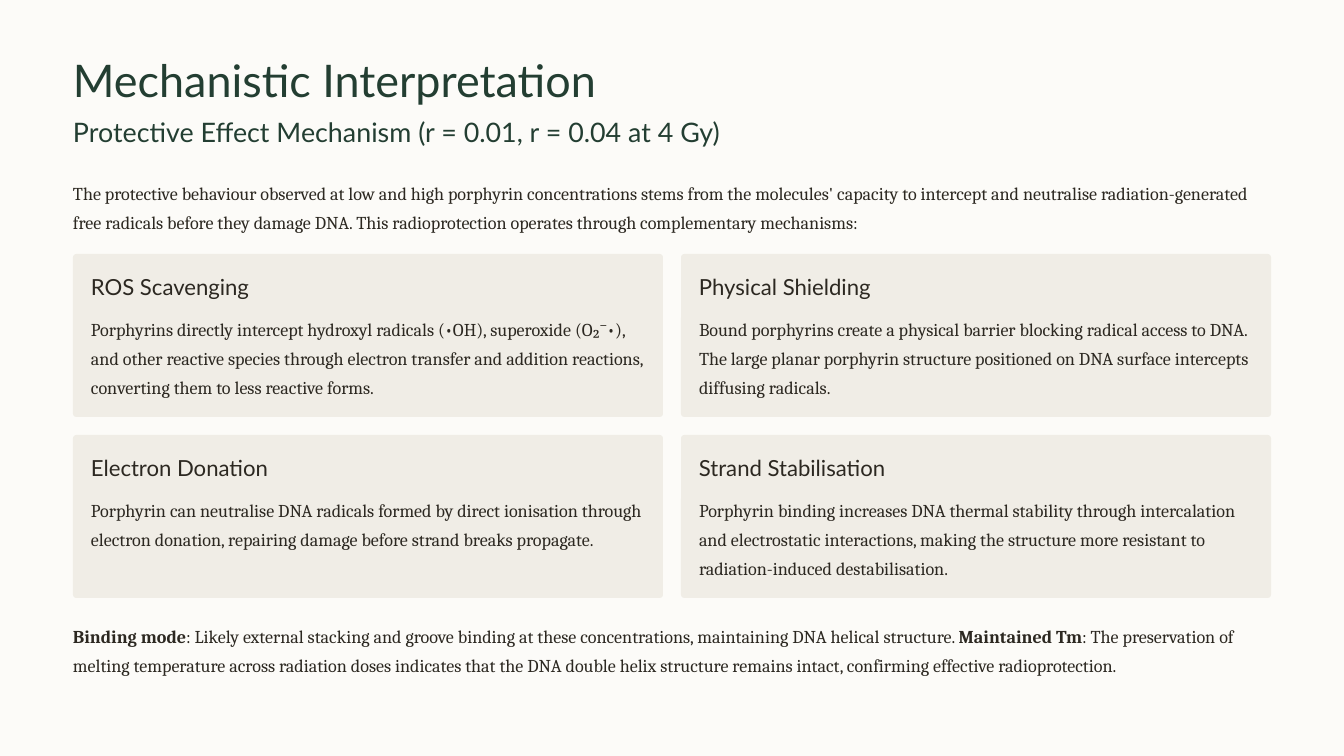
import pptx
import pptx.dml.color
import pptx.enum.shapes
import pptx.util

PX = 914400 // 84
GREEN, INK, SAND, PAPER = "233E32", "2C2821", "F0EDE6", "FCFBF8"

deck = pptx.Presentation()
deck.slide_width = 1344 * PX
deck.slide_height = 756 * PX
slide = deck.slides.add_slide(deck.slide_layouts[6])


def paint(fill, color):
    fill.solid()
    fill.fore_color.rgb = pptx.dml.color.RGBColor.from_string(color)


def write(text, x, y, w, h, size=15.5, font="Cambria", color=INK, lead=24.5, wrap=True):
    """Write a paragraph; parts between ** marks are bold."""
    box = slide.shapes.add_textbox(x * PX, y * PX, w * PX, h * PX)
    frame = box.text_frame
    frame.word_wrap = wrap
    frame.margin_left = frame.margin_top = frame.margin_right = frame.margin_bottom = 0
    para = frame.paragraphs[0]
    para.line_spacing = pptx.util.Pt(lead)
    for i, part in enumerate(text.split("**")):
        if part:
            run = para.add_run()
            run.text = part
            run.font.name = font
            run.font.size = pptx.util.Pt(size)
            run.font.bold = i % 2 == 1
            paint(run.font.fill, color)


# Background
paint(slide.background.fill, PAPER)

# Heading and introduction
left, wide = 73, 1199
write("Mechanistic Interpretation", left, 50, 547, 57,
      size=38.5, font="Lato", color=GREEN, lead=48.5, wrap=False)
write("Protective Effect Mechanism (r = 0.01, r = 0.04 at 4 Gy)", left, 114, 660, 34,
      size=23, font="Lato", color=GREEN, lead=29, wrap=False)
write("The protective behaviour observed at low and high porphyrin concentrations stems "
      "from the molecules' capacity to intercept and neutralise radiation-generated free "
      "radicals before they damage DNA. This radioprotection operates through "
      "complementary mechanisms:", left, 176, wide, 58)

# Mechanism cards in a two by two grid
cards = [
    ("ROS Scavenging",
     "Porphyrins directly intercept hydroxyl radicals (•OH), superoxide (O₂⁻•), and other "
     "reactive species through electron transfer and addition reactions, converting them "
     "to less reactive forms."),
    ("Physical Shielding",
     "Bound porphyrins create a physical barrier blocking radical access to DNA. The large "
     "planar porphyrin structure positioned on DNA surface intercepts diffusing radicals."),
    ("Electron Donation",
     "Porphyrin can neutralise DNA radicals formed by direct ionisation through electron "
     "donation, repairing damage before strand breaks propagate."),
    ("Strand Stabilisation",
     "Porphyrin binding increases DNA thermal stability through intercalation and "
     "electrostatic interactions, making the structure more resistant to "
     "radiation-induced destabilisation."),
]
top, gap, pad, tall = 254, 18, 18, 163
broad = (wide - gap) // 2
for i, (title, body) in enumerate(cards):
    x = left + i % 2 * (broad + gap)
    y = top + i // 2 * (tall + gap)
    card = slide.shapes.add_shape(pptx.enum.shapes.MSO_SHAPE.ROUNDED_RECTANGLE,
                                  x * PX, y * PX, broad * PX, tall * PX)
    card.adjustments[0] = 0.02
    card.shadow.inherit = False
    card.line.fill.background()
    paint(card.fill, SAND)
    write(title, x + pad, y + pad, 228, 29, size=19, font="Lato", lead=24, wrap=False)
    write(body, x + pad, y + 58, broad - 2 * pad, 87)

# Closing note
write("**Binding mode**: Likely external stacking and groove binding at these "
      "concentrations, maintaining DNA helical structure. **Maintained Tm**: The "
      "preservation of melting temperature across radiation doses indicates that the DNA "
      "double helix structure remains intact, confirming effective radioprotection.",
      left, 619, wide, 87)

deck.save("out.pptx")
